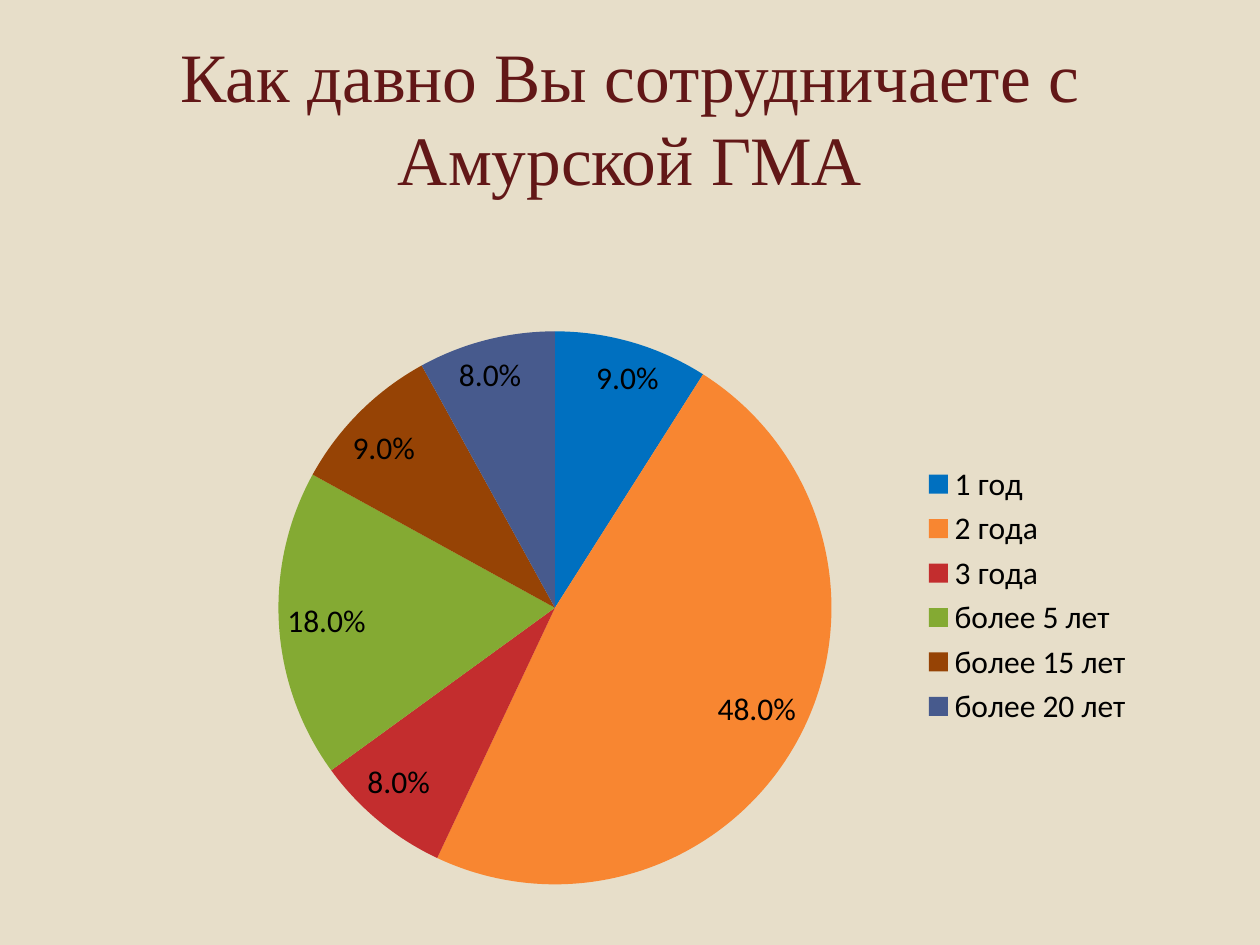
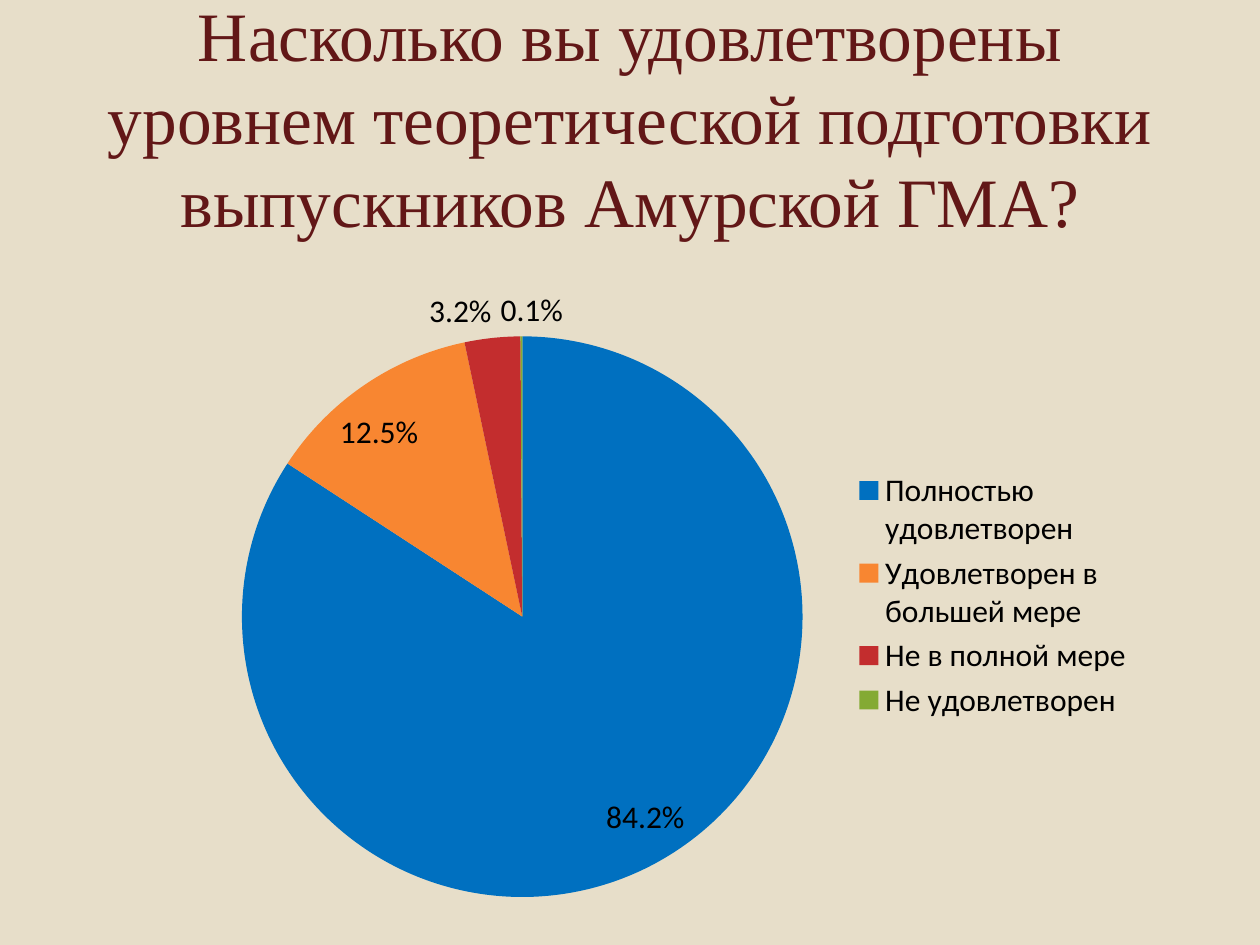
import pptx
import pptx.util
import pptx.chart.data
from dataclasses import dataclass
from lxml import etree
from pptx.dml.color import RGBColor
from pptx.enum.chart import XL_CHART_TYPE, XL_LABEL_POSITION, XL_LEGEND_POSITION
from pptx.enum.text import MSO_ANCHOR, PP_ALIGN
from pptx.oxml.ns import qn
from pptx.util import Inches


@dataclass(frozen=True)
class Theme:
    background: str = "E7DEC9"
    title_color: str = "621717"
    text_color: str = "000000"
    slices: tuple = ("0070C0", "F88631", "C32D2E", "84AA33", "964305", "475A8D")
    title_font: str = "Times New Roman"
    chart_font: str = "Calibri"
    title_size: float = 39.6
    chart_size: float = 18


class Deck:
    """Holds the theme and the slide being built."""

    CHART_BOX = (1.38, 2.18, 7.72, 5.09)

    def __init__(self, theme):
        self.theme = theme
        self.prs = pptx.Presentation()
        self.prs.slide_width, self.prs.slide_height = Inches(10), Inches(7.5)
        self.s = None

    def slide(self):
        self.s = self.prs.slides.add_slide(self.prs.slide_layouts[6])
        fill = self.s.background.fill
        fill.solid()
        fill.fore_color.rgb = RGBColor.from_string(self.theme.background)

    def style(self, font, name, size, color):
        font.name, font.size = name, pptx.util.Pt(size)
        font.color.rgb = RGBColor.from_string(color)

    def title(self, text):
        box = self.s.shapes.add_textbox(Inches(0.5), Inches(0.3), Inches(9), Inches(1.25))
        tf = box.text_frame
        tf.word_wrap, tf.vertical_anchor = True, MSO_ANCHOR.MIDDLE
        p = tf.paragraphs[0]
        p.text, p.alignment = text, PP_ALIGN.CENTER
        t = self.theme
        self.style(p.font, t.title_font, t.title_size, t.title_color)

    def pie(self, shares, left, top, diameter):
        """Draw a pie of {answer: percent} with its circle placed in inches on the slide."""
        t = self.theme
        data = pptx.chart.data.CategoryChartData()
        data.categories = list(shares)
        data.add_series("Series 1", list(shares.values()))
        frame = self.s.shapes.add_chart(
            XL_CHART_TYPE.PIE, *map(Inches, self.CHART_BOX), data)
        chart = frame.chart
        chart.has_title = False
        self.style(chart.font, t.chart_font, t.chart_size, t.text_color)

        chart.has_legend = True
        chart.legend.position = XL_LEGEND_POSITION.RIGHT
        chart.legend.include_in_layout = False

        plot = chart.plots[0]
        plot.vary_by_categories = True
        for point_no, color in zip(range(len(shares)), t.slices):
            fill = plot.series[0].points[point_no].format.fill
            fill.solid()
            fill.fore_color.rgb = RGBColor.from_string(color)

        plot.has_data_labels = True
        labels = plot.data_labels
        labels.show_percentage, labels.show_value = True, False
        labels.number_format, labels.number_format_is_linked = "0.0%", False
        labels.position = XL_LABEL_POSITION.BEST_FIT
        self.place_plot(chart, left, top, diameter)

    def place_plot(self, chart, left, top, diameter):
        x, y, width, height = self.CHART_BOX
        area = chart.plots[0]._element.getparent()
        for old in area.findall(qn("c:layout")):
            area.remove(old)
        layout = etree.Element(qn("c:layout"))
        manual = etree.SubElement(layout, qn("c:manualLayout"))
        settings = {
            "layoutTarget": "inner", "xMode": "edge", "yMode": "edge",
            "x": (left - x) / width, "y": (top - y) / height,
            "w": diameter / width, "h": diameter / height,
        }
        for tag, value in settings.items():
            etree.SubElement(manual, qn(f"c:{tag}")).set("val", str(value))
        area.insert(0, layout)


def main():
    deck = Deck(Theme())

    deck.slide()
    deck.title("Как давно Вы сотрудничаете с Амурской ГМА")
    deck.pie({"1 год": 9, "2 года": 48, "3 года": 8, "более 5 лет": 18,
              "более 15 лет": 9, "более 20 лет": 8},
             left=2.21, top=2.63, diameter=4.39)

    deck.slide()
    deck.title("Насколько вы удовлетворены уровнем теоретической подготовки "
               "выпускников Амурской ГМА?")
    deck.pie({"Полностью удовлетворен": 84.2, "Удовлетворен в большей мере": 12.5,
              "Не в полной мере": 3.2, "Не удовлетворен": 0.1},
             left=1.92, top=2.67, diameter=4.45)

    deck.prs.save("out.pptx")


if __name__ == "__main__":
    main()
